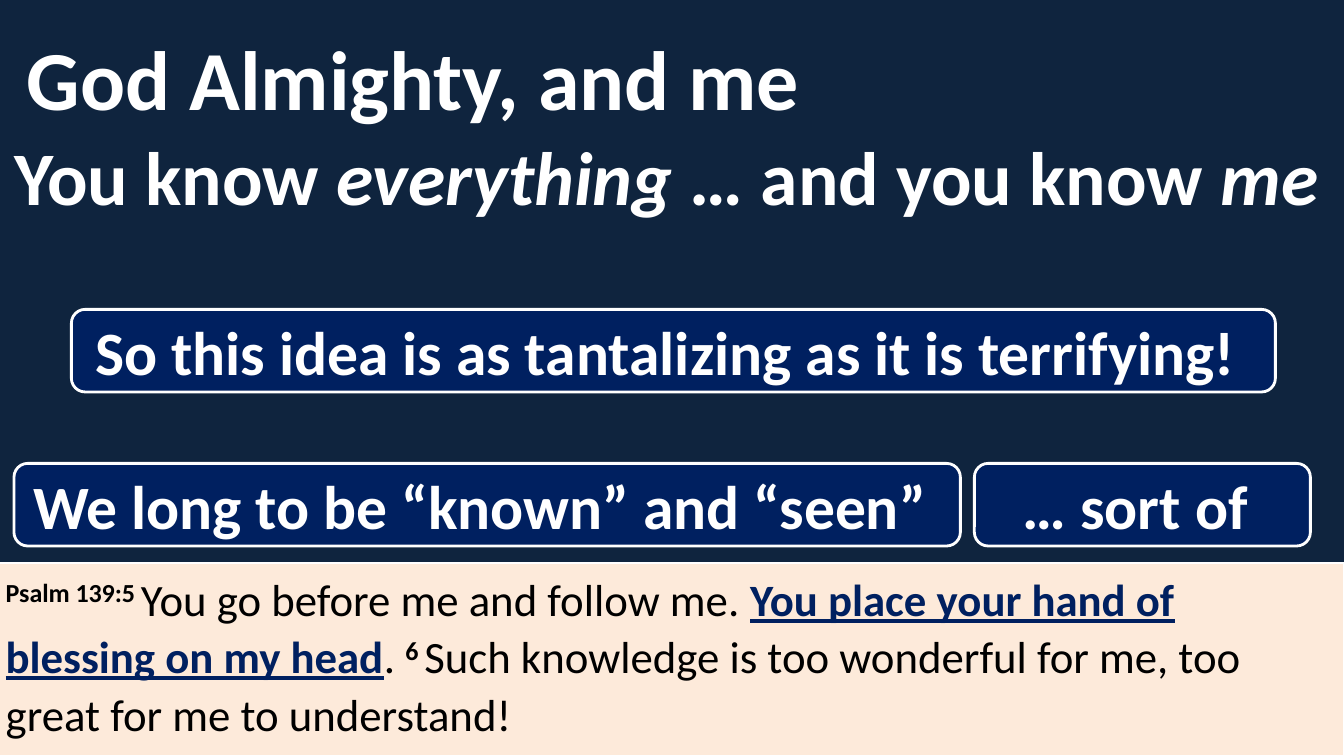
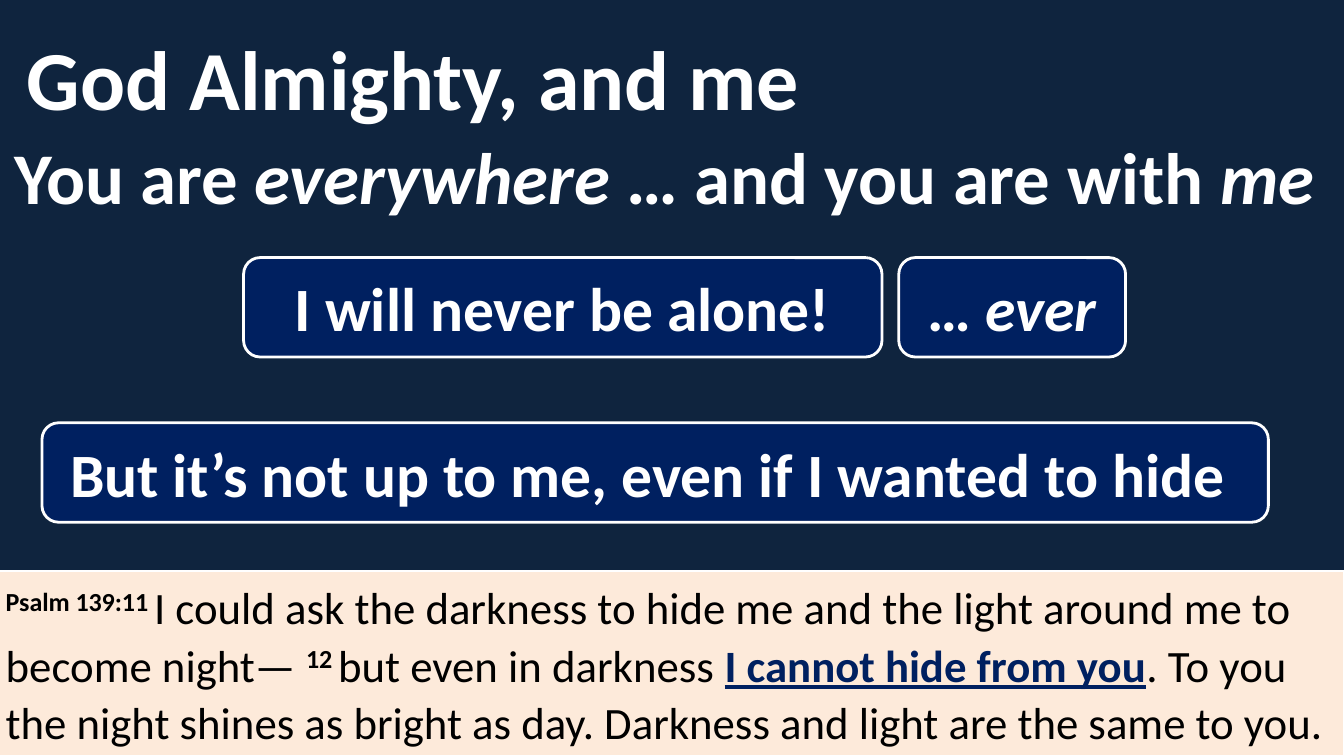
from pptx import Presentation
from pptx.dml.color import RGBColor
from pptx.enum.shapes import MSO_SHAPE as Preset
from pptx.enum.text import MSO_ANCHOR as Anchor, PP_ALIGN as Align
from pptx.util import Pt

WIDTH, HEIGHT = 960, 540
FONT = "Calibri"
NIGHT, NAVY, CREAM = "0F243E", "002060", "FDEADA"
WHITE, BLACK = "FFFFFF", "000000"


def color(value):
    return RGBColor.from_string(value)


class SermonDeck:
    """Holds the shared style and the current page."""

    def __init__(self):
        self.deck = Presentation()
        self.deck.slide_width, self.deck.slide_height = Pt(WIDTH), Pt(HEIGHT)
        self.page = None

    def new_page(self):
        self.page = self.deck.slides.add_slide(self.deck.slide_layouts[6])
        fill = self.page.background.fill
        fill.solid()
        fill.fore_color.rgb = color(NIGHT)

    def add_spans(self, box, spans, size, ink, anchor, align=Align.LEFT, bold=True):
        """Add (text, marks) spans; marks: i italic, v verse number, k key phrase."""
        frame = box.text_frame
        frame.word_wrap = True
        frame.vertical_anchor = anchor
        para = frame.paragraphs[0]
        para.alignment = align
        for text, marks in spans:
            span = para.add_run()
            span.text = text
            font = span.font
            font.name, font.size = FONT, Pt(size)
            font.bold = bold or marks in ("v", "k")
            font.italic = marks == "i"
            font.underline = marks == "k"
            font.color.rgb = color(NAVY if marks == "k" else ink)
            if marks == "v":
                span._r.get_or_add_rPr().set("baseline", "30000")
        return para

    def heading(self, left, top, width, spans, size):
        box = self.page.shapes.add_textbox(Pt(left), Pt(top), Pt(width), Pt(90))
        self.add_spans(box, spans, size, WHITE, Anchor.MIDDLE)

    def panel(self, preset, left, top, width, height, fill, line_width):
        box = self.page.shapes.add_shape(
            preset, Pt(left), Pt(top), Pt(width), Pt(height))
        box.shadow.inherit = False
        box.fill.solid()
        box.fill.fore_color.rgb = color(fill)
        box.line.color.rgb = color(WHITE)
        box.line.width = Pt(line_width)
        return box

    def callout(self, left, top, width, height, spans):
        box = self.panel(Preset.ROUNDED_RECTANGLE, left, top, width, height, NAVY, 2)
        self.add_spans(box, spans, 44, WHITE, Anchor.MIDDLE, Align.CENTER)

    def passage(self, top, spans):
        box = self.panel(Preset.RECTANGLE, -3, top, WIDTH + 3, HEIGHT - top, CREAM, 1.5)
        para = self.add_spans(box, spans, 32, BLACK, Anchor.TOP, bold=False)
        para.line_spacing = 1.07

    def sermon_page(self, theme, theme_size, passage_top, verses, callout_height, callouts):
        self.new_page()
        self.heading(12, 10, 570, [("God Almighty, and me", "")], 60)
        self.heading(3, 80, WIDTH - 3, theme, theme_size)
        self.passage(passage_top, verses)
        for left, top, width, spans in callouts:
            self.callout(left, top, width, callout_height, spans)


def main():
    sermon = SermonDeck()

    # Known by God
    sermon.sermon_page(
        theme=[("You know ", ""), ("everything", "i"),
               (" … and you know ", ""), ("me", "i")],
        theme_size=54,
        passage_top=402,
        verses=[("Psalm 139:5 ", "v"),
                ("You go before me and follow me. ", ""),
                ("You place your hand of blessing on my head", "k"),
                (". ", ""),
                ("6 ", "v"),
                ("Such knowledge is too wonderful for me, "
                 "too great for me to understand!", "")],
        callout_height=59,
        callouts=[
            (51, 221, 860, [("So this idea is as tantalizing as it is terrifying! ", "")]),
            (10, 331, 676, [("We long to be “known” and “seen” ", "")]),
            (696, 331, 240, [("… sort of ", "")]),
        ])

    # Never alone
    sermon.sermon_page(
        theme=[("You are ", ""), ("everywhere", "i"),
               (" … and you are with ", ""), ("me", "i")],
        theme_size=52,
        passage_top=408,
        verses=[("Psalm 139:11 ", "v"),
                ("I could ask the darkness to hide me and the light "
                 "around me to become night— ", ""),
                ("12 ", "v"),
                ("but even in darkness ", ""),
                ("I cannot hide from you", "k"),
                (". To you the night shines as bright as day. "
                 "Darkness and light are the same to you.", "")],
        callout_height=71,
        callouts=[
            (174, 184, 456, [("I will never be alone!", "")]),
            (642, 184, 162, [("… ", ""), ("ever", "i")]),
            (30, 302, 876, [("But it’s not up to me, even if I wanted to hide ", "")]),
        ])

    sermon.deck.save("out.pptx")


if __name__ == "__main__":
    main()
